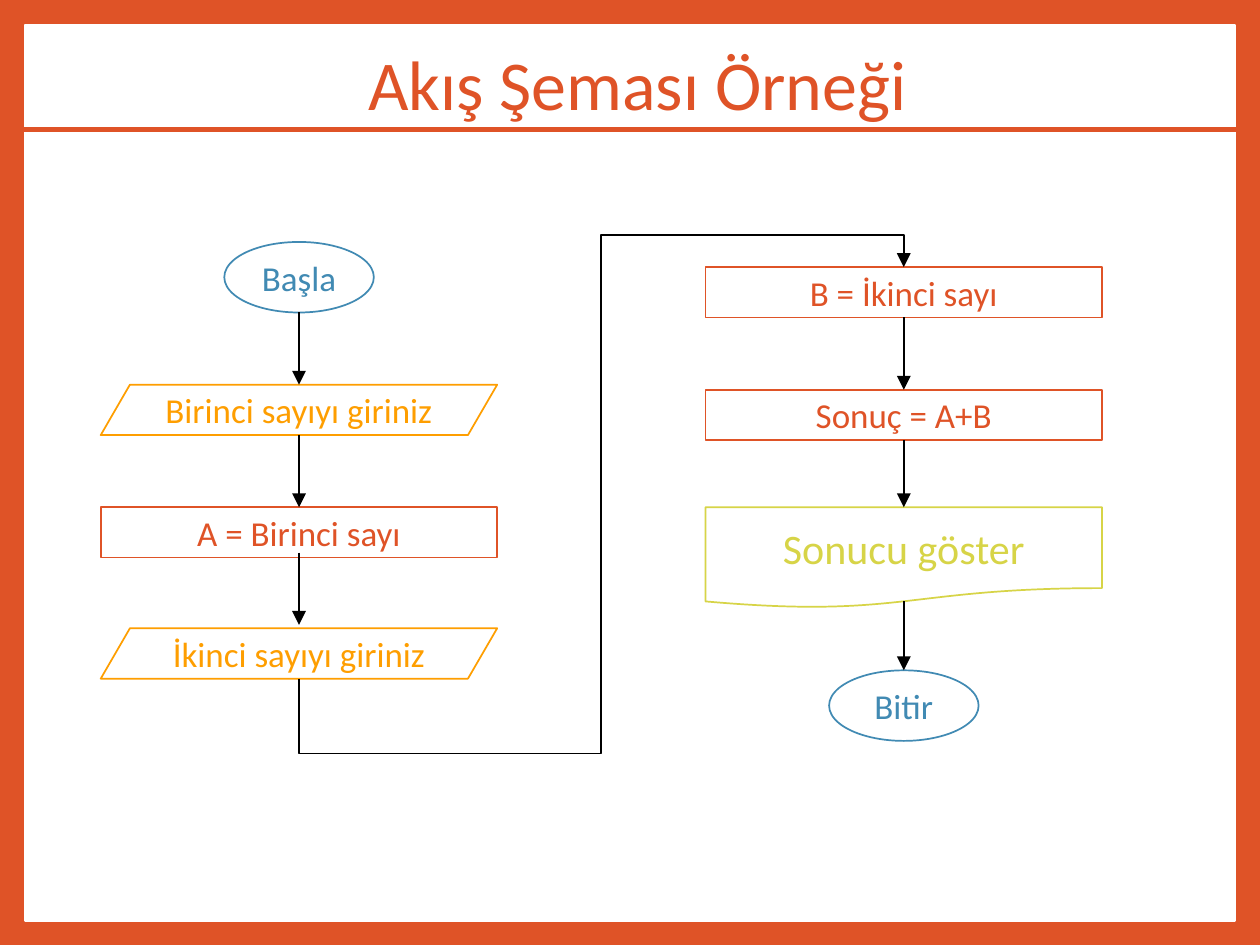
from dataclasses import dataclass

from lxml import etree
from pptx import Presentation
from pptx.dml.color import RGBColor
from pptx.enum.shapes import MSO_CONNECTOR, MSO_SHAPE
from pptx.enum.text import MSO_ANCHOR, PP_ALIGN
from pptx.oxml.ns import qn
from pptx.util import Inches, Pt

RECTANGLE = MSO_SHAPE.RECTANGLE
ELLIPSE = MSO_SHAPE.OVAL
PARALLELOGRAM = MSO_SHAPE.PARALLELOGRAM
DOCUMENT = MSO_SHAPE.FLOWCHART_DOCUMENT
STRAIGHT = MSO_CONNECTOR.STRAIGHT
ELBOW = MSO_CONNECTOR.ELBOW
CENTER = PP_ALIGN.CENTER
MIDDLE = MSO_ANCHOR.MIDDLE
TOP_SITE, BOTTOM_SITE = 0, 2


@dataclass(frozen=True)
class Theme:
    """Colours, font, type sizes and line widths of the slide."""
    orange: str = "DF5327"
    blue: str = "418AB3"
    amber: str = "FE9E00"
    lime: str = "D7D447"
    white: str = "FFFFFF"
    black: str = "000000"
    font: str = "Calibri"
    title_size: float = 30
    step_size: float = 15
    output_size: float = 18
    outline: float = 0.75
    arrow: float = 0.79
    rule: float = 2.25


THEME = Theme()
SLIDE_WIDTH = 7.5
SLIDE_HEIGHT = SLIDE_WIDTH * 3 / 4
STEP_WIDTH, STEP_HEIGHT = 2.36, 0.3
TERMINAL_WIDTH, TERMINAL_HEIGHT = 0.89, 0.42


def rgb(color):
    """Turn a hex string into a colour."""
    return RGBColor.from_string(color)


def write_text(shape, text, size, color):
    """Write one centred run in the middle of a shape."""
    frame = shape.text_frame
    frame.word_wrap = True
    frame.vertical_anchor = MIDDLE
    paragraph = frame.paragraphs[0]
    paragraph.alignment = CENTER
    run = paragraph.add_run()
    run.text = text
    run.font.name = THEME.font
    run.font.size = Pt(size)
    run.font.color.rgb = rgb(color)
    return paragraph


def style_line(connector, color, width, arrow=False):
    """Set a connector's line, drop its shadow and add an arrowhead if asked."""
    connector.line.color.rgb = rgb(color)
    connector.line.width = Pt(width)
    if arrow:
        line = connector.line._get_or_add_ln()
        etree.SubElement(line, qn("a:tailEnd"), type="triangle")
    etree.SubElement(connector._element.spPr, qn("a:effectLst"))


def add_step(slide, kind, box, text, color, size=THEME.step_size):
    """Draw one outlined flowchart step in its box."""
    shape = slide.shapes.add_shape(kind, *map(Inches, box))
    shape.shadow.inherit = False
    shape.fill.background()
    shape.line.color.rgb = rgb(color)
    shape.line.width = Pt(THEME.outline)
    if kind == PARALLELOGRAM:
        shape.adjustments[0] = 0.58
    frame = shape.text_frame
    frame.margin_left = frame.margin_right = Inches(0.07)
    frame.margin_top = frame.margin_bottom = Inches(0.04)
    write_text(shape, text, size, color)
    return shape


def add_arrow(slide, x, top, bottom, source=None, target=None):
    """Draw a downward arrow, joined to the rectangles that are given."""
    connector = slide.shapes.add_connector(
        STRAIGHT, Inches(x), Inches(top), Inches(x), Inches(bottom))
    if source is not None:
        connector.begin_connect(source, BOTTOM_SITE)
    if target is not None:
        connector.end_connect(target, TOP_SITE)
    style_line(connector, THEME.black, THEME.arrow, arrow=True)


def add_column_link(slide, start, end):
    """Draw the five-part elbow from the left column's foot to the right one's head."""
    across, rise = end[0] - start[0], start[1] - end[1]
    middle_x, middle_y = (start[0] + end[0]) / 2, (start[1] + end[1]) / 2
    connector = slide.shapes.add_connector(
        ELBOW,
        Inches(middle_x + rise / 2), Inches(middle_y + across / 2),
        Inches(middle_x - rise / 2), Inches(middle_y - across / 2))
    properties = connector._element.spPr
    properties.find(qn("a:xfrm")).set("rot", str(90 * 60000))
    geometry = properties.find(qn("a:prstGeom"))
    geometry.set("prst", "bentConnector5")
    guides = geometry.find(qn("a:avLst"))
    for number, value in enumerate((-18200, 50000, 107700), 1):
        etree.SubElement(guides, qn("a:gd"), name=f"adj{number}", fmla=f"val {value}")
    style_line(connector, THEME.black, THEME.arrow, arrow=True)


def add_frame(slide, box):
    """Draw the white page on the orange background."""
    slide.background.fill.solid()
    slide.background.fill.fore_color.rgb = rgb(THEME.orange)
    page = slide.shapes.add_shape(RECTANGLE, *map(Inches, box))
    page.shadow.inherit = False
    page.fill.solid()
    page.fill.fore_color.rgb = rgb(THEME.white)
    page.line.color.rgb = rgb(THEME.white)
    page.line.width = Pt(1)


def add_title(slide, box):
    """Write the title and the rule that runs under it."""
    left, top, width, _ = box
    title = slide.shapes.add_textbox(*map(Inches, box))
    paragraph = write_text(title, "Akış Şeması Örneği", THEME.title_size, THEME.orange)
    paragraph.line_spacing = 0.9
    rule_y = Inches(top + 0.61)
    rule = slide.shapes.add_connector(
        STRAIGHT, Inches(left - 0.1), rule_y, Inches(left + width - 0.07), rule_y)
    style_line(rule, THEME.orange, THEME.rule)


def add_input_column(slide, left, top):
    """Draw the left column and return the point where it ends."""
    center = left + STEP_WIDTH / 2
    first, assign, second = (top + offset for offset in (0.85, 1.58, 2.3))
    add_step(slide, ELLIPSE,
             (center - TERMINAL_WIDTH / 2, top, TERMINAL_WIDTH, TERMINAL_HEIGHT),
             "Başla", THEME.blue)
    add_step(slide, PARALLELOGRAM, (left, first, STEP_WIDTH, STEP_HEIGHT),
             "Birinci sayıyı giriniz", THEME.amber)
    assignment = add_step(slide, RECTANGLE, (left, assign, STEP_WIDTH, STEP_HEIGHT),
                          "A = Birinci sayı", THEME.orange)
    add_step(slide, PARALLELOGRAM, (left, second, STEP_WIDTH, STEP_HEIGHT),
             "İkinci sayıyı giriniz", THEME.amber)
    add_arrow(slide, center, top + TERMINAL_HEIGHT, first)
    add_arrow(slide, center, first + STEP_HEIGHT, assign, target=assignment)
    add_arrow(slide, center, assign + 0.27, second - 0.02)
    return center, second + STEP_HEIGHT


def add_result_column(slide, left, top):
    """Draw the right column and return the point where it begins."""
    center = left + STEP_WIDTH / 2
    total, output, finish = (top + offset for offset in (0.73, 1.43, 2.4))
    assignment = add_step(slide, RECTANGLE, (left, top, STEP_WIDTH, STEP_HEIGHT),
                          "B = İkinci sayı", THEME.orange)
    addition = add_step(slide, RECTANGLE, (left, total, STEP_WIDTH, STEP_HEIGHT),
                        "Sonuç = A+B", THEME.orange)
    add_step(slide, DOCUMENT, (left, output, STEP_WIDTH, 2 * STEP_HEIGHT),
             "Sonucu göster", THEME.lime, THEME.output_size)
    add_step(slide, ELLIPSE,
             (center - TERMINAL_WIDTH / 2, finish, TERMINAL_WIDTH, TERMINAL_HEIGHT),
             "Bitir", THEME.blue)
    add_arrow(slide, center, top + STEP_HEIGHT, total, assignment, addition)
    add_arrow(slide, center, total + STEP_HEIGHT, output, source=addition)
    add_arrow(slide, center, output + 0.56, finish)
    return center, top


def main():
    """Build the flowchart slide and save it."""
    presentation = Presentation()
    presentation.slide_width = Inches(SLIDE_WIDTH)
    presentation.slide_height = Inches(SLIDE_HEIGHT)
    slide = presentation.slides.add_slide(presentation.slide_layouts[6])
    add_frame(slide, (0.15, 0.15, 7.2, 5.33))
    add_title(slide, (0.15, 0.16, 7.29, 0.73))
    foot = add_input_column(slide, 0.6, 1.44)
    head = add_result_column(slide, 4.2, 1.59)
    add_column_link(slide, foot, head)
    presentation.save("out.pptx")


if __name__ == "__main__":
    main()
